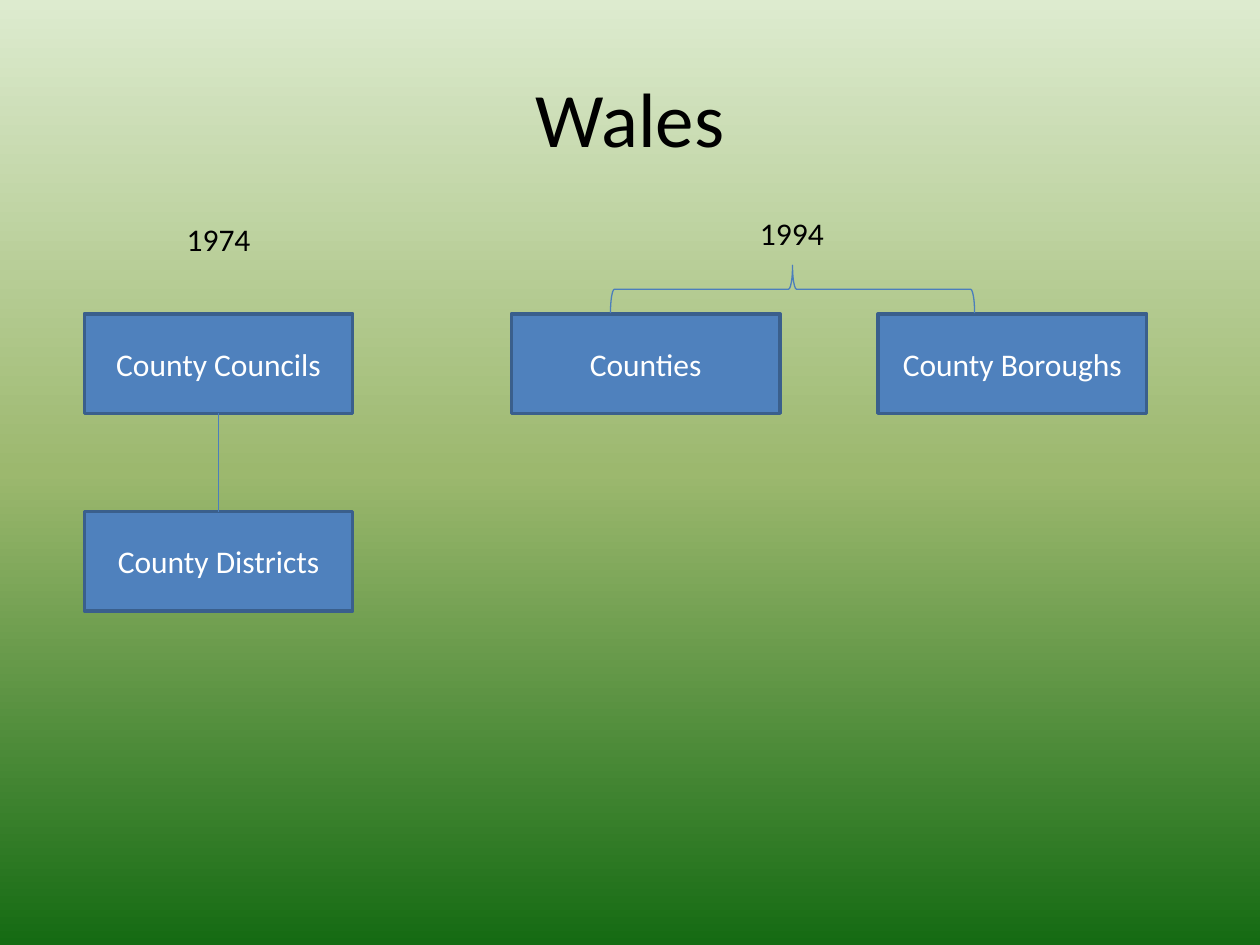
from copy import deepcopy
from dataclasses import dataclass

from pptx import Presentation
from pptx.dml.color import RGBColor
from pptx.enum.shapes import MSO_CONNECTOR, MSO_SHAPE
from pptx.enum.text import MSO_ANCHOR, PP_ALIGN
from pptx.oxml.ns import qn
from pptx.oxml.xmlchemy import OxmlElement
from pptx.util import Inches, Pt

COLORS = {"text": "000000", "box": "4F81BD", "border": "3A5F8C",
          "line": "4B7EBC", "white": "FFFFFF"}
BACKGROUND = [(0, "DDEBCF"), (0.5, "9CB86E"), (1, "156B13")]
BOX_W, BOX_H = 2.13, 0.79
COUNCIL_X, COUNTY_X, BOROUGH_X = 0.67, 4.06, 6.97
TOP_Y, DISTRICT_Y = 2.49, 4.06


@dataclass
class Box:
    text: str
    x: float
    y: float


@dataclass
class Year:
    text: str
    x: float
    y: float
    w: float


BOXES = [
    Box("County Councils", COUNCIL_X, TOP_Y),
    Box("County Districts", COUNCIL_X, DISTRICT_Y),
    Box("Counties", COUNTY_X, TOP_Y),
    Box("County Boroughs", BOROUGH_X, TOP_Y),
]
YEARS = [Year("1974", COUNCIL_X, 1.7, BOX_W), Year("1994", 5.42, 1.65, 1.73)]


def rgb(name: str) -> RGBColor:
    return RGBColor.from_string(COLORS[name])


def write(tf, text: str, *, size: float = 18, color: str = "text",
          anchor=MSO_ANCHOR.MIDDLE) -> None:
    tf.word_wrap = True
    tf.vertical_anchor = anchor
    p = tf.paragraphs[0]
    p.alignment = PP_ALIGN.CENTER
    r = p.add_run()
    r.text = text
    r.font.name = "Calibri"
    r.font.size = Pt(size)
    r.font.color.rgb = rgb(color)


def set_line(sp, color: str, width: float) -> None:
    sp.line.color.rgb = rgb(color)
    sp.line.width = Pt(width)


def paint_background(s) -> None:
    fill = s.background.fill
    fill.gradient()
    fill.gradient_angle = 270
    stops = next(s.element.iter(qn("a:gsLst")))
    stops.insert(1, deepcopy(stops[0]))
    for stop, (position, color) in zip(fill.gradient_stops, BACKGROUND):
        stop.position = position
        stop.color.rgb = RGBColor.from_string(color)


def add_box(s, box: Box) -> None:
    sp = s.shapes.add_shape(MSO_SHAPE.RECTANGLE, Inches(box.x), Inches(box.y),
                            Inches(BOX_W), Inches(BOX_H))
    sp.shadow.inherit = False
    sp.fill.solid()
    sp.fill.fore_color.rgb = rgb("box")
    set_line(sp, "border", 2)
    write(sp.text_frame, box.text, color="white")


def add_year(s, year: Year) -> None:
    sp = s.shapes.add_textbox(Inches(year.x), Inches(year.y), Inches(year.w), Inches(0.4))
    write(sp.text_frame, year.text, anchor=MSO_ANCHOR.TOP)


def main() -> None:
    prs = Presentation()
    prs.slide_width, prs.slide_height = Inches(10), Inches(7.5)
    s = prs.slides.add_slide(prs.slide_layouts[5])
    paint_background(s)

    # Title
    title = s.shapes.title
    title.left, title.top = Inches(0.5), Inches(0.3)
    title.width, title.height = Inches(9), Inches(1.25)
    write(title.text_frame, "Wales", size=44)

    # Authorities
    for box in BOXES:
        add_box(s, box)

    # Councils to districts
    mid = Inches(COUNCIL_X + BOX_W / 2)
    link = s.shapes.add_connector(MSO_CONNECTOR.STRAIGHT, mid, Inches(TOP_Y + BOX_H),
                                  mid, Inches(DISTRICT_Y))
    set_line(link, "line", 0.75)
    link._element.spPr.append(OxmlElement("a:effectLst"))

    # Years
    for year in YEARS:
        add_year(s, year)

    # Brace from 1994 to its two boxes
    brace = s.shapes.add_shape(MSO_SHAPE.RIGHT_BRACE, Inches(6.1), Inches(0.85),
                               Inches(0.38), Inches(2.89))
    brace.rotation = 270
    brace.shadow.inherit = False
    brace.fill.background()
    set_line(brace, "line", 0.75)

    prs.save("out.pptx")


if __name__ == "__main__":
    main()
